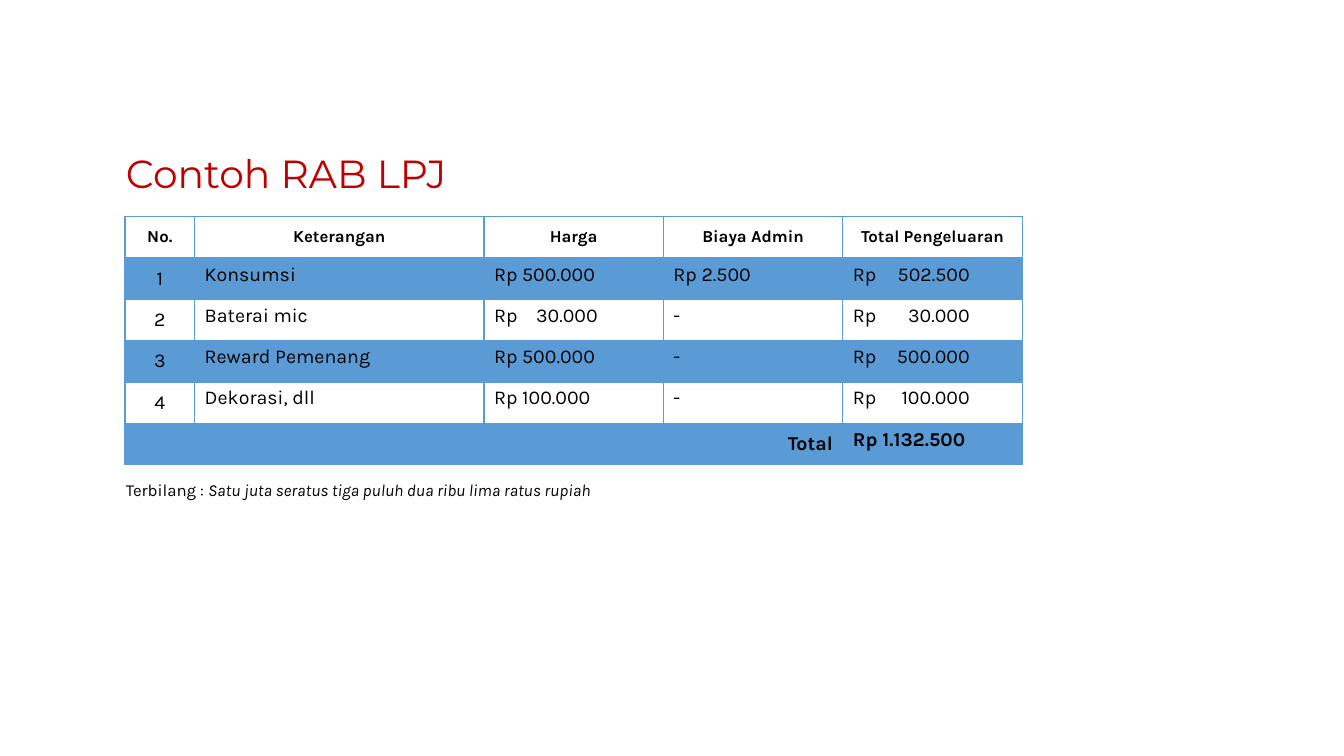
import dataclasses

import pptx
import pptx.dml.color
import pptx.enum.text
import pptx.oxml
import pptx.oxml.ns
import pptx.util

Inches = pptx.util.Inches
Align = pptx.enum.text.PP_ALIGN
Anchor = pptx.enum.text.MSO_ANCHOR


@dataclasses.dataclass(frozen=True)
class Theme:
    """Colours, fonts and type sizes of the slide."""
    red: str = "C00000"
    blue: str = "5B9BD5"
    black: str = "000000"
    heading_font: str = "Montserrat"
    body_font: str = "Karla"
    heading_size: int = 28
    body_size: int = 14
    small_size: int = 12
    band_opacity: int = 20


THEME = Theme()
COLUMN_WIDTHS = (0.69, 2.87, 1.78, 1.78, 1.78)
ROW_HEIGHT = 0.41
AMOUNT_TABS = {2: 1.03, 4: 1.16}
BUDGET = (
    ("No.", "Keterangan", "Harga", "Biaya Admin", "Total Pengeluaran"),
    ("1", "Konsumsi", "Rp 500.000", "Rp 2.500", "Rp\t502.500"),
    ("2", "Baterai mic", "Rp\t30.000", "-", "Rp\t30.000"),
    ("3", "Reward Pemenang", "Rp 500.000", "-", "Rp\t500.000"),
    ("4", "Dekorasi, dll", "Rp 100.000", "-", "Rp\t100.000"),
    ("Total", "", "", "", "Rp 1.132.500"),
)
HEADER_ROW, TOTAL_ROW = 0, len(BUDGET) - 1


def xml(markup):
    """Parse one drawing element written with the a: prefix."""
    head, rest = markup.split(" ", 1)
    return pptx.oxml.parse_xml(f"{head} {pptx.oxml.ns.nsdecls('a')} {rest}")


def style_font(paragraph, family, size, color, bold=None):
    """Set the font shared by all runs of a paragraph."""
    font = paragraph.font
    font.name = family
    font.size = pptx.util.Pt(size)
    font.color.rgb = pptx.dml.color.RGBColor.from_string(color)
    font.bold = bold


def add_line(slide, box, spacing, family, size, color, text, italic_text=""):
    """Add a one-paragraph text box, optionally ending in italics."""
    frame = slide.shapes.add_textbox(*map(Inches, box)).text_frame
    frame.word_wrap = True
    frame.vertical_anchor = Anchor.MIDDLE
    paragraph = frame.paragraphs[0]
    paragraph.line_spacing = spacing
    style_font(paragraph, family, size, color)
    paragraph.add_run().text = text
    if italic_text:
        ending = paragraph.add_run()
        ending.text = italic_text
        ending.font.italic = True


def add_borders(cell, row):
    """Draw the cell borders, with a heavier rule under the header."""
    heavy_sides = {HEADER_ROW: "B", HEADER_ROW + 1: "T"}
    properties = cell._tc.get_or_add_tcPr()
    for side in "LRTB":
        width = pptx.util.Pt(2 if heavy_sides.get(row) == side else 1)
        properties.append(xml(
            f'<a:ln{side} w="{width}"><a:solidFill>'
            f'<a:srgbClr val="{THEME.blue}"/></a:solidFill></a:ln{side}>'))


def fill_band(cell, row):
    """Tint the odd rows and leave the others clear."""
    if row % 2 == 0:
        cell.fill.background()
        return
    cell.fill.solid()
    cell.fill.fore_color.rgb = pptx.dml.color.RGBColor.from_string(THEME.blue)
    tint = cell._tc.tcPr.find(".//" + pptx.oxml.ns.qn("a:srgbClr"))
    tint.append(xml(f'<a:alpha val="{THEME.band_opacity * 1000}"/>'))


def write_cell(cell, row, column, text):
    """Write and align the text of one budget cell."""
    header, total = row == HEADER_ROW, row == TOTAL_ROW
    cell.text = text
    paragraph = cell.text_frame.paragraphs[0]
    if header or column == 0:
        cell.vertical_anchor = Anchor.MIDDLE
        paragraph.alignment = Align.RIGHT if total else Align.CENTER
    if "\t" in text:
        position = Inches(AMOUNT_TABS[column])
        paragraph._p.get_or_add_pPr().append(xml(
            f'<a:tabLst ><a:tab pos="{position}" algn="r"/></a:tabLst>'))
    size = THEME.small_size if header else THEME.body_size
    style_font(paragraph, THEME.body_font, size, THEME.black, header or total)


def add_budget_table(slide, left, top):
    """Add the budget table with its merged total row."""
    table = slide.shapes.add_table(
        len(BUDGET), len(COLUMN_WIDTHS), Inches(left), Inches(top),
        Inches(sum(COLUMN_WIDTHS)), Inches(ROW_HEIGHT * len(BUDGET))).table
    table.first_row = table.horz_banding = False
    for column, width in zip(table.columns, COLUMN_WIDTHS):
        column.width = Inches(width)
    for row, texts in enumerate(BUDGET):
        table.rows[row].height = Inches(ROW_HEIGHT)
        for column, text in enumerate(texts):
            cell = table.cell(row, column)
            add_borders(cell, row)
            fill_band(cell, row)
            if text:
                write_cell(cell, row, column, text)
    table.cell(TOTAL_ROW, 0).merge(table.cell(TOTAL_ROW, 3))


def main():
    """Build the slide and save it."""
    deck = pptx.Presentation()
    deck.slide_width, deck.slide_height = Inches(13.33), Inches(7.5)
    slide = deck.slides.add_slide(deck.slide_layouts[6])
    add_line(slide, (1.15, 1.17, 3.83, 1.14), 0.9, THEME.heading_font,
             THEME.heading_size, THEME.red, "Contoh RAB LPJ")
    add_budget_table(slide, 1.24, 2.15)
    add_line(slide, (1.15, 4.58, 5.88, 0.45), 1.5, THEME.body_font,
             THEME.small_size, THEME.black, "Terbilang : ",
             "Satu juta seratus tiga puluh dua ribu lima ratus rupiah")
    deck.save("out.pptx")


if __name__ == "__main__":
    main()
